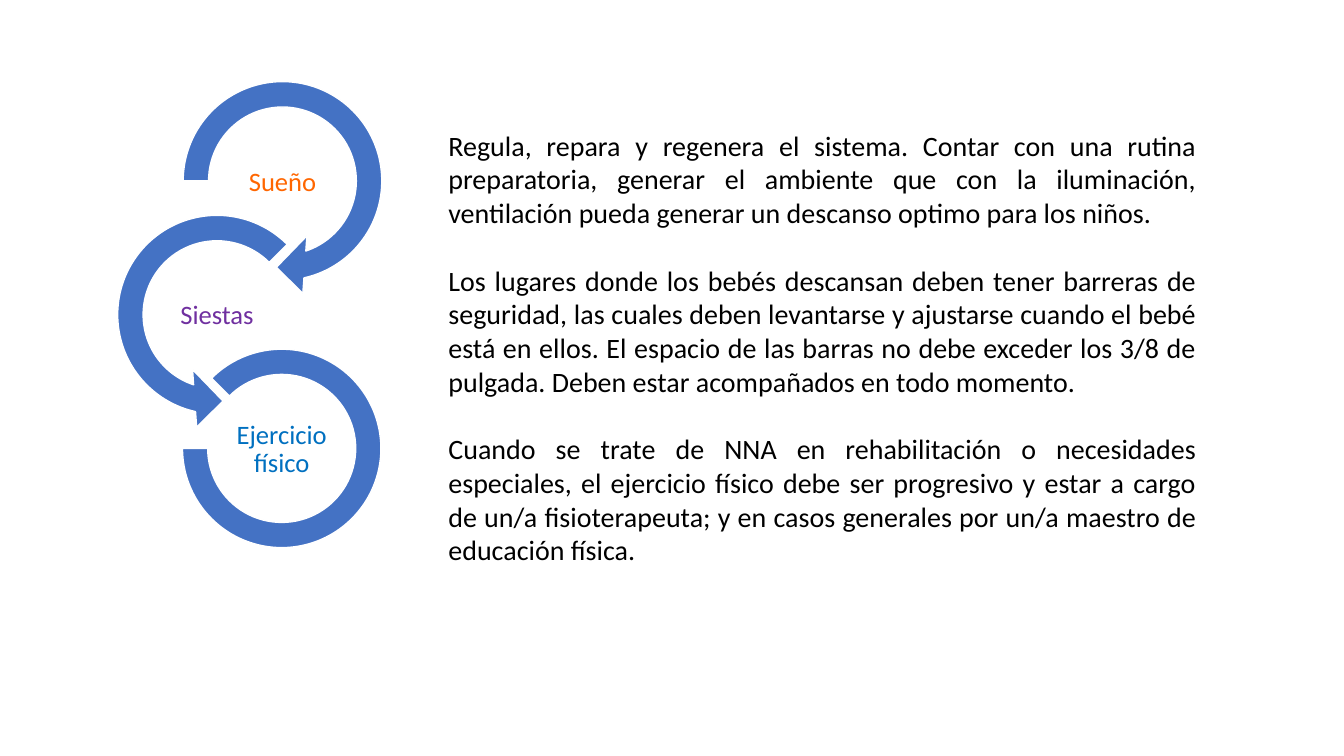
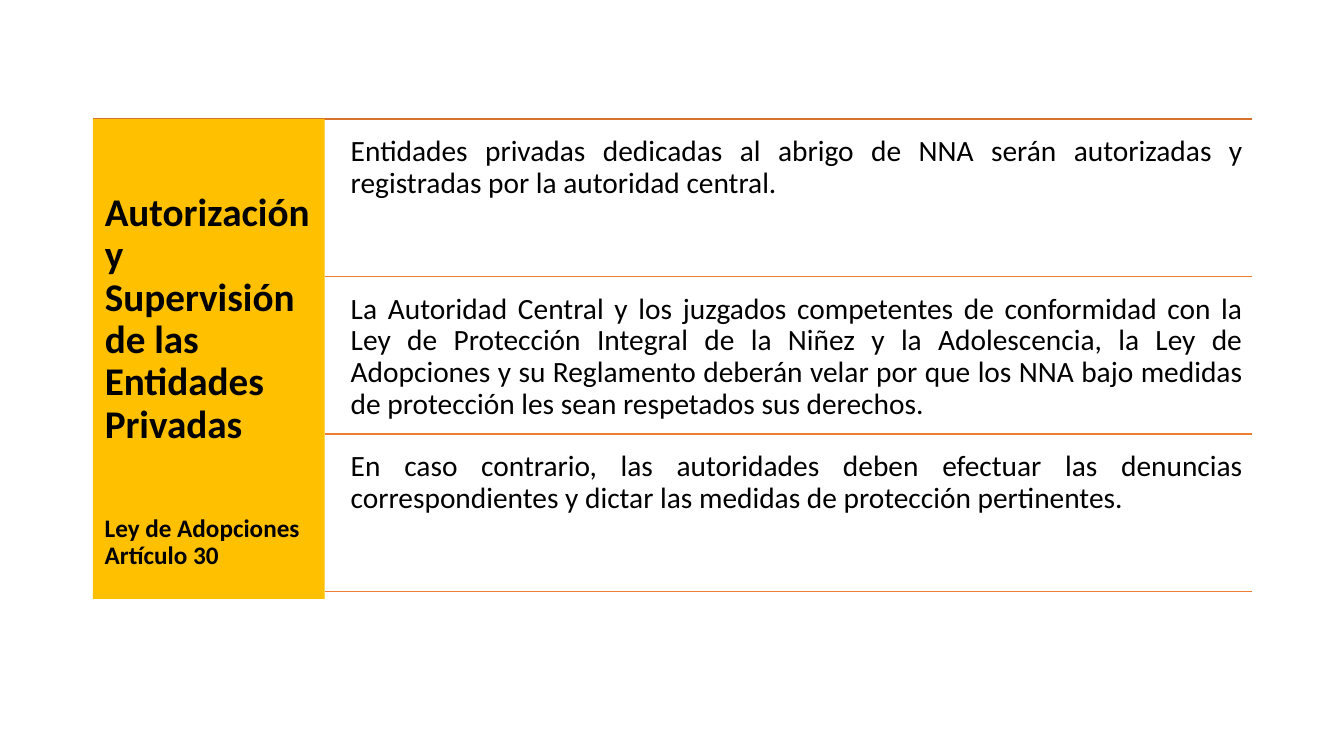
from dataclasses import dataclass

from lxml import etree
from pptx import Presentation
from pptx.dml.color import RGBColor
from pptx.enum.shapes import MSO_CONNECTOR, MSO_SHAPE
from pptx.enum.text import MSO_ANCHOR, MSO_AUTO_SIZE, PP_ALIGN
from pptx.oxml.ns import qn
from pptx.util import Cm, Pt

LEFT, CENTER, JUSTIFY = PP_ALIGN.LEFT, PP_ALIGN.CENTER, PP_ALIGN.JUSTIFY
TOP, MIDDLE = MSO_ANCHOR.TOP, MSO_ANCHOR.MIDDLE
RECT, STRAIGHT = MSO_SHAPE.RECTANGLE, MSO_CONNECTOR.STRAIGHT
TITLE_ONLY, BLANK = 5, 6


@dataclass(frozen=True)
class Theme:
    font: str = "Calibri"
    ink: str = "000000"
    white: str = "FFFFFF"
    ring: str = "4472C4"
    panel: str = "FFC000"
    rule: str = "ED7D31"
    edge: str = "D7712C"
    title: int = 28
    row: int = 21
    body: int = 20
    label: int = 19
    note: int = 18


THEME = Theme()

# Ring shape, size, adjustments, side shift, label, label colour
RINGS = [
    (MSO_SHAPE.CIRCULAR_ARROW, 5.82, (0.11, 11.42, 45, 108, 0.125),
     1.65, "Sueño", "FF6600"),
    (MSO_SHAPE.LEFT_CIRCULAR_ARROW, 5.82, (0.11, 11.42, 63, 189, 0.125),
     0, "Siestas", "7030A0"),
    (MSO_SHAPE.BLOCK_ARC, 5, (135, 108, 0.127),
     1.63, "Ejercicio físico", "0070C0"),
]
ADVICE = [
    "Regula, repara y regenera el sistema. Contar con una rutina preparatoria, "
    "generar el ambiente que con la iluminación, ventilación pueda generar un "
    "descanso optimo para los niños.",
    "Los lugares donde los bebés descansan deben tener barreras de seguridad, "
    "las cuales deben levantarse y ajustarse cuando el bebé está en ellos. El "
    "espacio de las barras no debe exceder los 3/8 de pulgada. Deben estar "
    "acompañados en todo momento.",
    "Cuando se trate de NNA en rehabilitación o necesidades especiales, el "
    "ejercicio físico debe ser progresivo y estar a cargo de un/a "
    "fisioterapeuta; y en casos generales por un/a maestro de educación física.",
]
HEADING = "Autorización y Supervisión de las Entidades Privadas"
SOURCE = "Ley de Adopciones Artículo 30"
DUTIES = [
    "Entidades privadas dedicadas al abrigo de NNA serán autorizadas y "
    "registradas por la autoridad central.",
    "La Autoridad Central y los juzgados competentes de conformidad con la Ley "
    "de Protección Integral de la Niñez y la Adolescencia, la Ley de Adopciones "
    "y su Reglamento deberán velar por que los NNA bajo medidas de protección "
    "les sean respetados sus derechos.",
    "En caso contrario, las autoridades deben efectuar las denuncias "
    "correspondientes y dictar las medidas de protección pertinentes.",
]


def color(code):
    return RGBColor.from_string(code)


def place(shape, box):
    shape.left, shape.top, shape.width, shape.height = map(Cm, box)


def write(shape, texts, size, ink=THEME.ink, align=LEFT, anchor=TOP,
          inset=(0.25, 0.13), bold=False, line=0.9, gap=0):
    """Fill a text frame; gap is the space between paragraphs in points."""
    frame = shape.text_frame
    frame.word_wrap = True
    frame.auto_size = MSO_AUTO_SIZE.NONE
    frame.vertical_anchor = anchor
    frame.margin_left = frame.margin_right = Cm(inset[0])
    frame.margin_top = frame.margin_bottom = Cm(inset[1])
    frame.text = "\n".join(texts)
    for i, par in enumerate(frame.paragraphs):
        par.alignment = align
        par.line_spacing = line
        par.space_before = Pt(gap if i else 0)
        for run in par.runs:
            font = run.font
            font.name, font.size, font.bold = THEME.font, Pt(size), bold
            font.color.rgb = color(ink)


def add_text(slide, box, texts, size, **style):
    shape = slide.shapes.add_textbox(*map(Cm, box))
    write(shape, texts, size, **style)


def add_form(slide, kind, box, fill, line=None):
    shape = slide.shapes.add_shape(kind, *map(Cm, box))
    shape.shadow.inherit = False
    shape.fill.solid()
    shape.fill.fore_color.rgb = color(fill)
    if line:
        shape.line.color.rgb = color(line)
        shape.line.width = Pt(1)
    else:
        shape.line.fill.background()
    return shape


def add_rule(slide, left, right, y, ink):
    rule = slide.shapes.add_connector(
        STRAIGHT, Cm(left), Cm(y), Cm(right), Cm(y))
    rule.line.color.rgb = color(ink)
    rule.line.width = Pt(1)
    etree.SubElement(rule._element.spPr, qn("a:effectLst"))


def add_rings(slide, box):
    """Chain of rings, the two arrows overlapping the next ring."""
    left, top, _, height = box
    big, last = RINGS[0][1], RINGS[-1][1]
    step = (height - big / 2 - last / 2) / (len(RINGS) - 1)
    wide, high = 3.23, 1.63
    for i, (kind, size, adjust, shift, label, ink) in enumerate(RINGS):
        x = left + big / 2 + shift
        y = top + big / 2 + i * step
        ring = add_form(slide, kind, (x - size / 2, y - size / 2, size, size),
                        THEME.ring, THEME.white)
        for n, value in enumerate(adjust):
            ring.adjustments[n] = value
        add_text(slide, (x - wide / 2, y - high / 2 + 0.04, wide, high),
                 [label], THEME.label, ink=ink, align=CENTER, anchor=MIDDLE,
                 inset=(0.03, 0.03))


def add_panel(slide, box):
    """Coloured panel with the slide title and its legal source."""
    left, top, width, _ = box
    add_form(slide, RECT, box, THEME.panel)
    title = slide.shapes.title
    # Bring the title in front of the panel
    slide.shapes._spTree.append(title._element)
    place(title, (left, top + 1.55, width, 7.5))
    write(title, [HEADING], THEME.title, bold=True, inset=(0.3, 0.3))
    add_text(slide, (left, top + 9.7, width, 2.3), [SOURCE], THEME.note,
             bold=True, inset=(0.3, 0.3))


def add_duties(slide, box):
    """Equal rows of text, each closed by a rule."""
    left, top, width, height = box
    step = height / len(DUTIES)
    for i, duty in enumerate(DUTIES):
        y = top + i * step
        add_text(slide, (left + 0.43, y + 0.2, width - 0.43, step - 0.2),
                 [duty], THEME.row, align=JUSTIFY, inset=(0.23, 0.23))
        add_rule(slide, left, left + width, y + step, THEME.rule)


def rest_slide(deck):
    slide = deck.slides.add_slide(deck.slide_layouts[BLANK])
    add_rings(slide, (2.56, 1.65, 7.47, 12.15))
    add_text(slide, (11.05, 3.1, 19.35, 12.14), ADVICE, THEME.body,
             align=JUSTIFY, line=1, gap=24.4)


def law_slide(deck):
    slide = deck.slides.add_slide(deck.slide_layouts[TITLE_ONLY])
    left, top, right, split = 2.34, 3, 31.55, 8.18
    add_rule(slide, left, right, top, THEME.edge)
    add_panel(slide, (left, top, split - left, 12.09))
    add_duties(slide, (split, top, right - split, 11.91))


def main():
    deck = Presentation()
    deck.slide_width, deck.slide_height = Cm(33.87), Cm(19.05)
    rest_slide(deck)
    law_slide(deck)
    deck.save("out.pptx")


if __name__ == "__main__":
    main()
